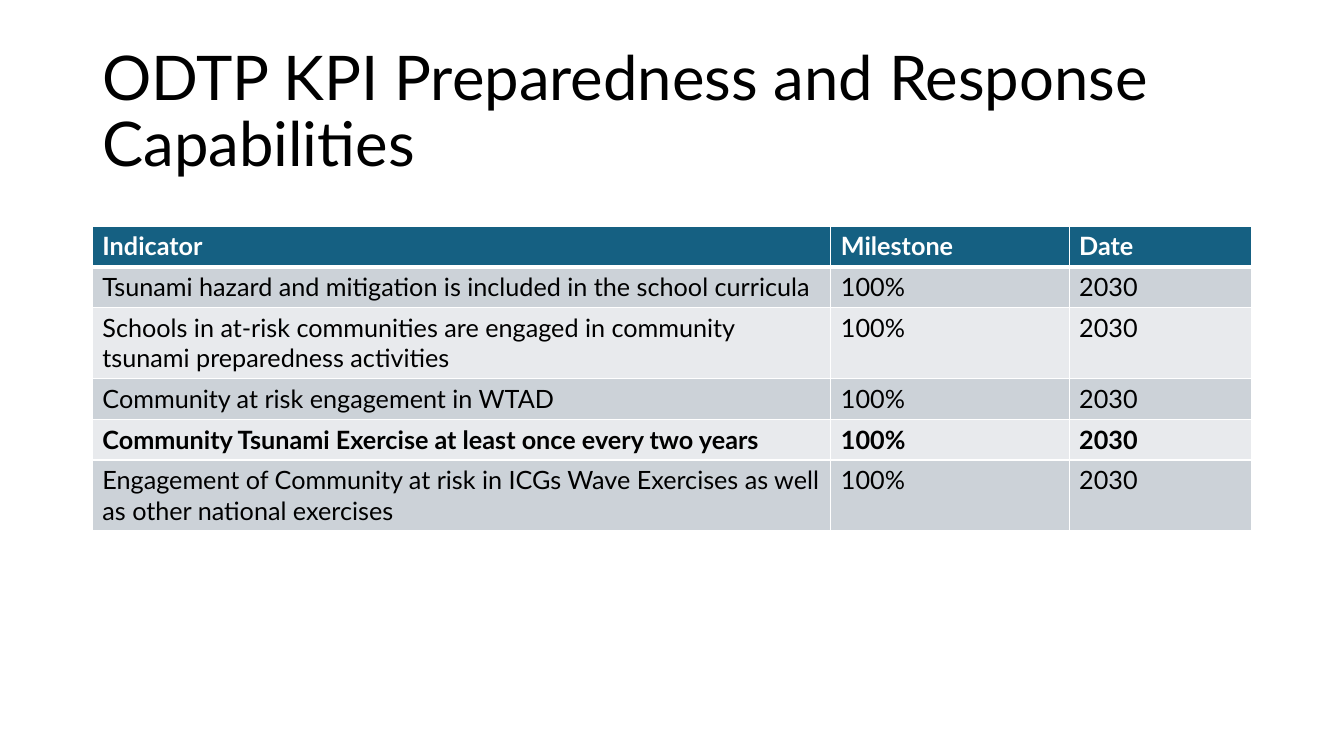
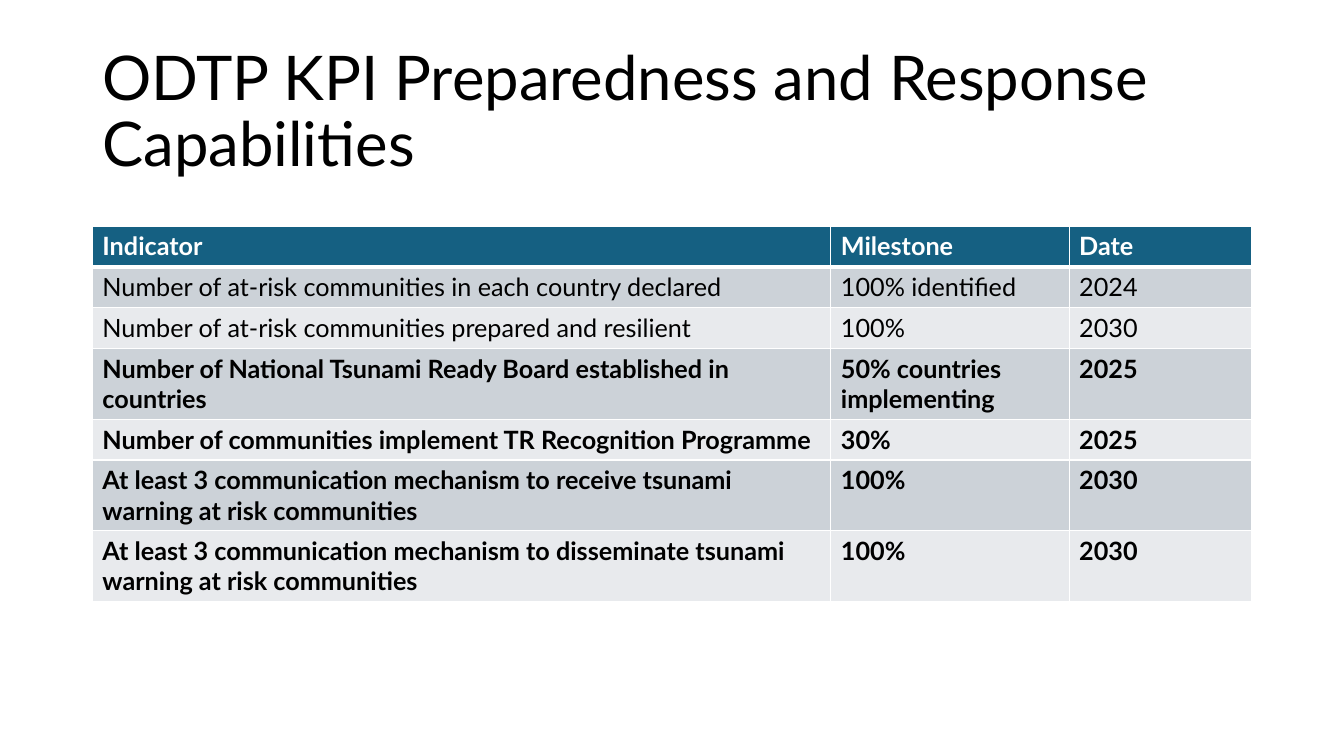
from lxml import etree
from pptx import Presentation
from pptx.dml.color import RGBColor
from pptx.enum.text import MSO_ANCHOR
from pptx.oxml.ns import qn
from pptx.util import Pt

MIDDLE = MSO_ANCHOR.MIDDLE

FONT = "Lato"
BLACK, WHITE = "000000", "FFFFFF"
HEADER_FILL = "156082"
BAND_FILLS = ("CCD2D8", "E8EAED")
THIN, THICK = 1, 3

LEFT, WIDTH = 66, 828
TITLE_TOP, TITLE_HEIGHT = 28.75, 104.4
TABLE_TOP, ROW_HEIGHT = 161.4, 29.2
COLUMN_WIDTHS = (527.5, 170.2, 130.3)

TITLE = "ODTP KPI Preparedness and Response Capabilities"
HEADINGS = ("Indicator", "Milestone", "Date")

RESPONSE_ROWS = (
    ("Tsunami hazard and mitigation is included in the school curricula", "100%", "2030", False),
    ("Schools in at-risk communities are engaged in community tsunami preparedness activities",
     "100%", "2030", False),
    ("Community at risk engagement in WTAD", "100%", "2030", False),
    ("Community Tsunami Exercise at least once every two years", "100%", "2030", True),
    ("Engagement of Community at risk in ICGs Wave Exercises as well as other national exercises",
     "100%", "2030", False),
)
READINESS_ROWS = (
    ("Number of at-risk communities in each country declared", "100% identified", "2024", False),
    ("Number of at-risk communities prepared and resilient", "100%", "2030", False),
    ("Number of National Tsunami Ready Board established in countries",
     "50% countries implementing", "2025", True),
    ("Number of communities implement TR Recognition Programme", "30%", "2025", True),
    ("At least 3 communication mechanism to receive tsunami warning at risk communities",
     "100%", "2030", True),
    ("At least 3 communication mechanism to disseminate tsunami warning at risk communities",
     "100%", "2030", True),
)


def rgb(value):
    return RGBColor.from_string(value)


def add_span(para, text, size, color, bold=False):
    span = para.add_run()
    span.text = text
    span.font.name = FONT
    span.font.size = Pt(size)
    span.font.bold = bold
    span.font.color.rgb = rgb(color)


def add_title(page, text):
    box = page.shapes.add_textbox(Pt(LEFT), Pt(TITLE_TOP), Pt(WIDTH), Pt(TITLE_HEIGHT))
    frame = box.text_frame
    frame.word_wrap = True
    frame.vertical_anchor = MIDDLE
    para = frame.paragraphs[0]
    para.line_spacing = 0.9
    add_span(para, text, 44, BLACK)


def set_borders(cell, top, bottom):
    properties = cell._tc.get_or_add_tcPr()
    for side, width in (("L", THIN), ("R", THIN), ("T", top), ("B", bottom)):
        line = etree.SubElement(properties, qn(f"a:ln{side}"), w=str(Pt(width)))
        fill = etree.SubElement(line, qn("a:solidFill"))
        etree.SubElement(fill, qn("a:srgbClr"), val=WHITE)


def fill_row(table, index, texts, fill, color, bold):
    top = THICK if index == 1 else THIN
    bottom = THICK if index == 0 else THIN
    table.rows[index].height = Pt(ROW_HEIGHT)
    for cell, text in zip(table.rows[index].cells, texts):
        set_borders(cell, top, bottom)
        cell.fill.solid()
        cell.fill.fore_color.rgb = rgb(fill)
        add_span(cell.text_frame.paragraphs[0], text, 18, color, bold)


def add_indicator_table(page, rows):
    count = len(rows) + 1
    table = page.shapes.add_table(count, len(HEADINGS), Pt(LEFT), Pt(TABLE_TOP),
                                  Pt(WIDTH), Pt(ROW_HEIGHT * count)).table
    for column, width in zip(table.columns, COLUMN_WIDTHS):
        column.width = Pt(width)
    fill_row(table, 0, HEADINGS, HEADER_FILL, WHITE, True)
    for index, (*texts, bold) in enumerate(rows, start=1):
        fill_row(table, index, texts, BAND_FILLS[(index - 1) % 2], BLACK, bold)


def main():
    deck = Presentation()
    deck.slide_width, deck.slide_height = Pt(960), Pt(540)
    for rows in (RESPONSE_ROWS, READINESS_ROWS):
        page = deck.slides.add_slide(deck.slide_layouts[6])
        add_title(page, TITLE)
        add_indicator_table(page, rows)
    deck.save("out.pptx")


if __name__ == "__main__":
    main()
